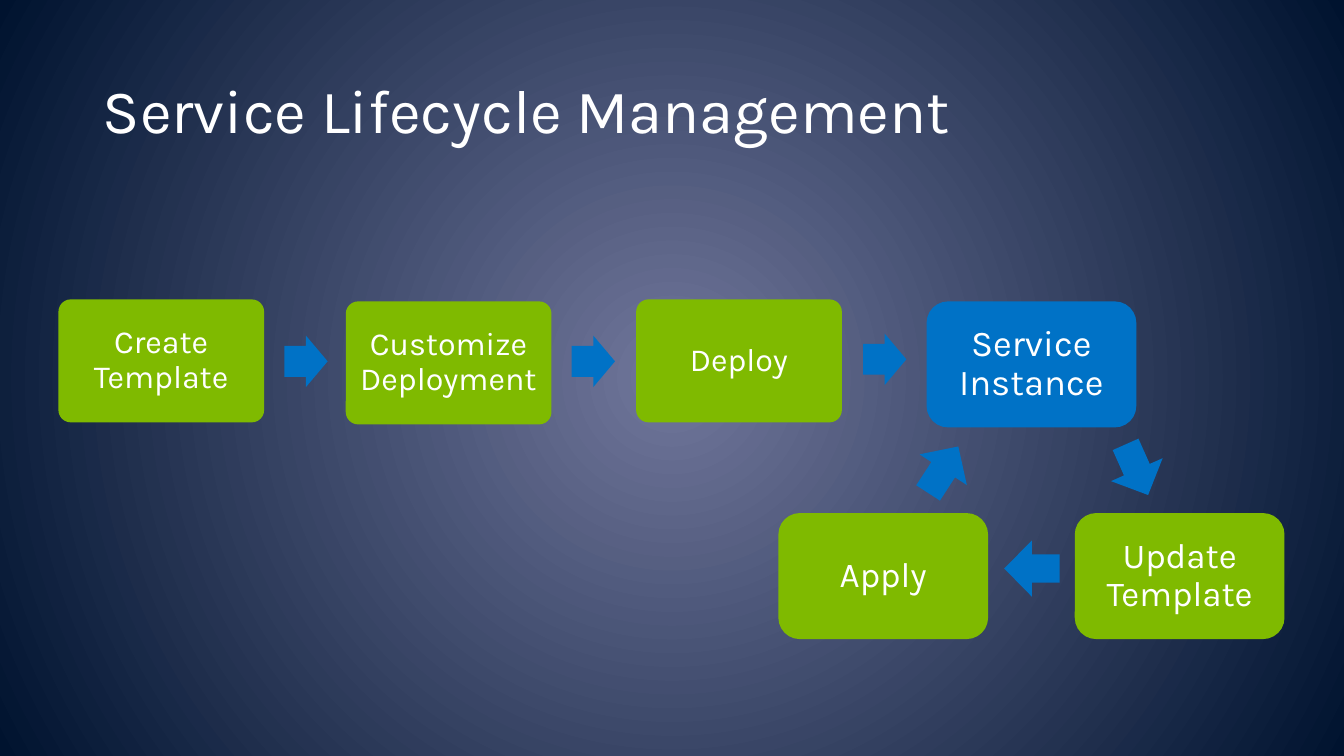
"""Build the Service Lifecycle Management slide."""
from lxml import etree
from pptx import Presentation
from pptx.dml.color import RGBColor
from pptx.enum.shapes import MSO_SHAPE as Shape
from pptx.enum.text import MSO_ANCHOR as Anchor, MSO_AUTO_SIZE as AutoSize, PP_ALIGN as Align
from pptx.oxml.ns import qn
from pptx.util import Inches, Pt

COLORS = {"center": "70769B", "edge": "00132F", "green": "7FBA00", "blue": "0072C6", "white": "FFFFFF"}
FONT = "Karla"


def add_block(page, kind, bounds, color):
    block = page.shapes.add_shape(kind, *[Inches(value) for value in bounds])
    block.shadow.inherit = False
    block.fill.solid()
    block.fill.fore_color.rgb = RGBColor.from_string(COLORS[color])
    block.line.fill.background()
    return block


def format_text(frame, text, size, align):
    frame.text = text
    frame.word_wrap = True
    frame.auto_size = AutoSize.NONE
    frame.vertical_anchor = Anchor.MIDDLE
    para = frame.paragraphs[0]
    para.alignment = align
    para.line_spacing = 0.9
    para.font.name = FONT
    para.font.size = Pt(size)
    para.font.color.rgb = RGBColor.from_string(COLORS["white"])


deck = Presentation()
deck.slide_width, deck.slide_height = Inches(13.33), Inches(7.5)
page = deck.slides.add_slide(deck.slide_layouts[5])

backdrop = page.background.fill
backdrop.gradient()
for stop, position, name in zip(backdrop.gradient_stops, (0, 1), ("center", "edge")):
    stop.position = position
    stop.color.rgb = RGBColor.from_string(COLORS[name])
gradient = page.background._cSld.find(".//" + qn("a:gradFill"))
gradient.remove(gradient.find(qn("a:lin")))
circle = etree.Element(qn("a:path"), path="circle")
etree.SubElement(circle, qn("a:fillToRect"), l="50000", t="50000", r="50000", b="50000")
gradient.find(qn("a:gsLst")).addnext(circle)

title = page.shapes.title
title.left, title.top = Inches(0.92), Inches(0.4)
title.width, title.height = Inches(11.5), Inches(1.45)
format_text(title.text_frame, "Service Lifecycle Management", 44, Align.LEFT)

STEP = {"size": (2.04, 1.22), "radius": 0.1, "inset": 0.08}
STAGE = {"size": (2.08, 1.25), "radius": 0.17, "inset": 0.1}
boxes = [
    ("Create Template", 0.58, 2.97, STEP, 23, "green"),
    ("Customize Deployment", 3.43, 2.99, STEP, 23, "green"),
    ("Deploy", 6.31, 2.97, STEP, 23, "green"),
    ("Service Instance", 9.19, 2.99, STAGE, 26, "blue"),
    ("Update Template", 10.66, 5.09, STAGE, 25, "green"),
    ("Apply", 7.72, 5.09, STAGE, 25, "green"),
]
for text, left, top, style, size, color in boxes:
    box = add_block(page, Shape.ROUNDED_RECTANGLE, (left, top, *style["size"]), color)
    box.adjustments[0] = style["radius"]
    frame = box.text_frame
    frame.margin_left = frame.margin_right = Inches(style["inset"])
    frame.margin_top = frame.margin_bottom = Inches(style["inset"])
    format_text(frame, text, size, Align.CENTER)

FLOW = (0.43, 0.51, 0.6)
CYCLE = (0.55, 0.56, 0.5)
arrows = [
    (2.82, 3.33, FLOW, 0),
    (5.67, 3.33, FLOW, 0),
    (8.56, 3.31, FLOW, 0),
    (11, 4.38, CYCLE, 66),
    (9.96, 5.36, CYCLE, 180),
    (9.08, 4.38, CYCLE, 303),
]
for left, top, (width, height, shaft), angle in arrows:
    arrow = add_block(page, Shape.RIGHT_ARROW, (left, top, width, height), "blue")
    arrow.adjustments[0] = shaft
    arrow.adjustments[1] = 0.5
    arrow.rotation = angle

deck.save("out.pptx")
